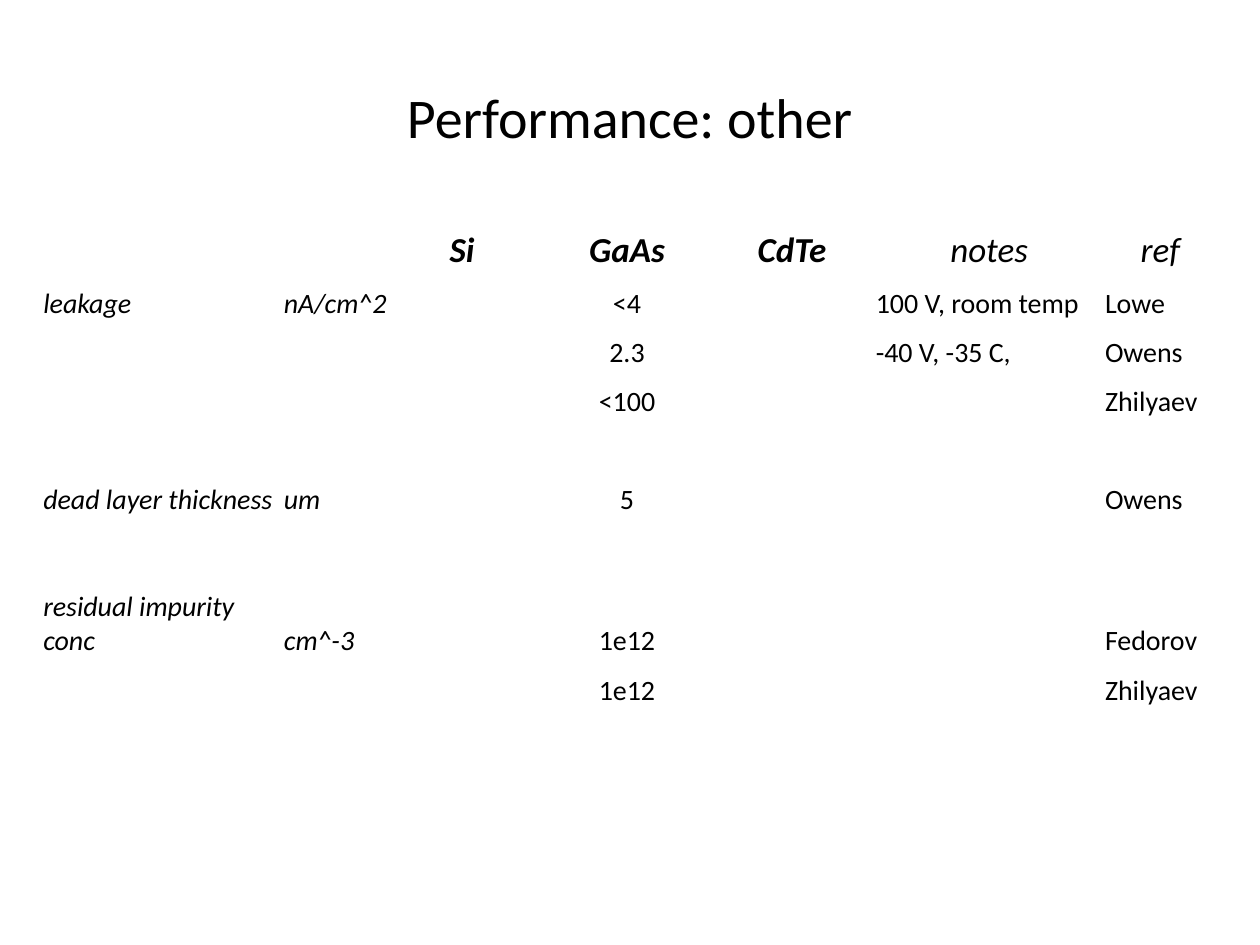
from pptx import Presentation
from pptx.dml.color import RGBColor
from pptx.enum.text import MSO_ANCHOR as Anchor, PP_ALIGN as Align
from pptx.util import Pt

BLACK = RGBColor(0x00, 0x00, 0x00)
WHITE = RGBColor(0xFF, 0xFF, 0xFF)

HEADER = ["", "", "Si", "GaAs", "CdTe", "notes", "ref"]
MEASUREMENTS = [
    ["leakage", "nA/cm^2", "", "<4", "", "100 V, room temp", "Lowe"],
    ["", "", "", "2.3", "", "-40 V, -35 C,", "Owens"],
    ["", "", "", "<100", "", "", "Zhilyaev"],
    [""] * 7,
    ["dead layer thickness", "um", "", "5", "", "", "Owens"],
    [""] * 7,
    ["residual impurity conc", "cm^-3", "", "1e12", "", "", "Fedorov"],
    ["", "", "", "1e12", "", "", "Zhilyaev"],
    [""] * 7,
]
COLUMN_WIDTHS = [137.5, 55.4, 94.3, 94.3, 94.3, 131, 64.8]
ROW_HEIGHTS = [35.2] + [28.1] * 6 + [52.6] + [28.1] * 2
MATERIALS = range(2, 5)


def write(frame, text, size=16, bold=False, italic=False, align=Align.LEFT):
    paragraph = frame.paragraphs[0]
    paragraph.alignment = align
    paragraph.font.size = Pt(size)
    if text:
        run = paragraph.add_run()
        run.text = text
        run.font.name = "Calibri"
        run.font.size = Pt(size)
        run.font.bold = bold
        run.font.italic = italic
        run.font.color.rgb = BLACK


prs = Presentation()
prs.slide_width, prs.slide_height = Pt(720), Pt(540)
slide = prs.slides.add_slide(prs.slide_layouts[6])
slide.background.fill.solid()
slide.background.fill.fore_color.rgb = WHITE

title = slide.shapes.add_textbox(Pt(36), Pt(21.6), Pt(648), Pt(90)).text_frame
title.word_wrap = True
title.vertical_anchor = Anchor.MIDDLE
write(title, "Performance: other", size=32, align=Align.CENTER)

performance = slide.shapes.add_table(
    len(ROW_HEIGHTS), len(COLUMN_WIDTHS), Pt(24), Pt(120),
    Pt(sum(COLUMN_WIDTHS)), Pt(sum(ROW_HEIGHTS))).table
performance.first_row = False
performance.horz_banding = False
for column, width in zip(performance.columns, COLUMN_WIDTHS):
    column.width = Pt(width)
for row, height in zip(performance.rows, ROW_HEIGHTS):
    row.height = Pt(height)

for r, values in enumerate([HEADER] + MEASUREMENTS):
    is_header = r == 0
    for c, value in enumerate(values):
        cell = performance.cell(r, c)
        cell.fill.background()
        cell.vertical_anchor = Anchor.BOTTOM
        cell.margin_left = cell.margin_right = cell.margin_top = Pt(0.75)
        cell.margin_bottom = Pt(0)
        write(cell.text_frame, value,
              size=20 if is_header else 16,
              bold=is_header and c in MATERIALS,
              italic=is_header or c < 2,
              align=Align.CENTER if is_header or c in MATERIALS else Align.LEFT)

# The leakage unit is wider than its column
performance.cell(1, 1).merge(performance.cell(1, 2))

prs.save("out.pptx")
